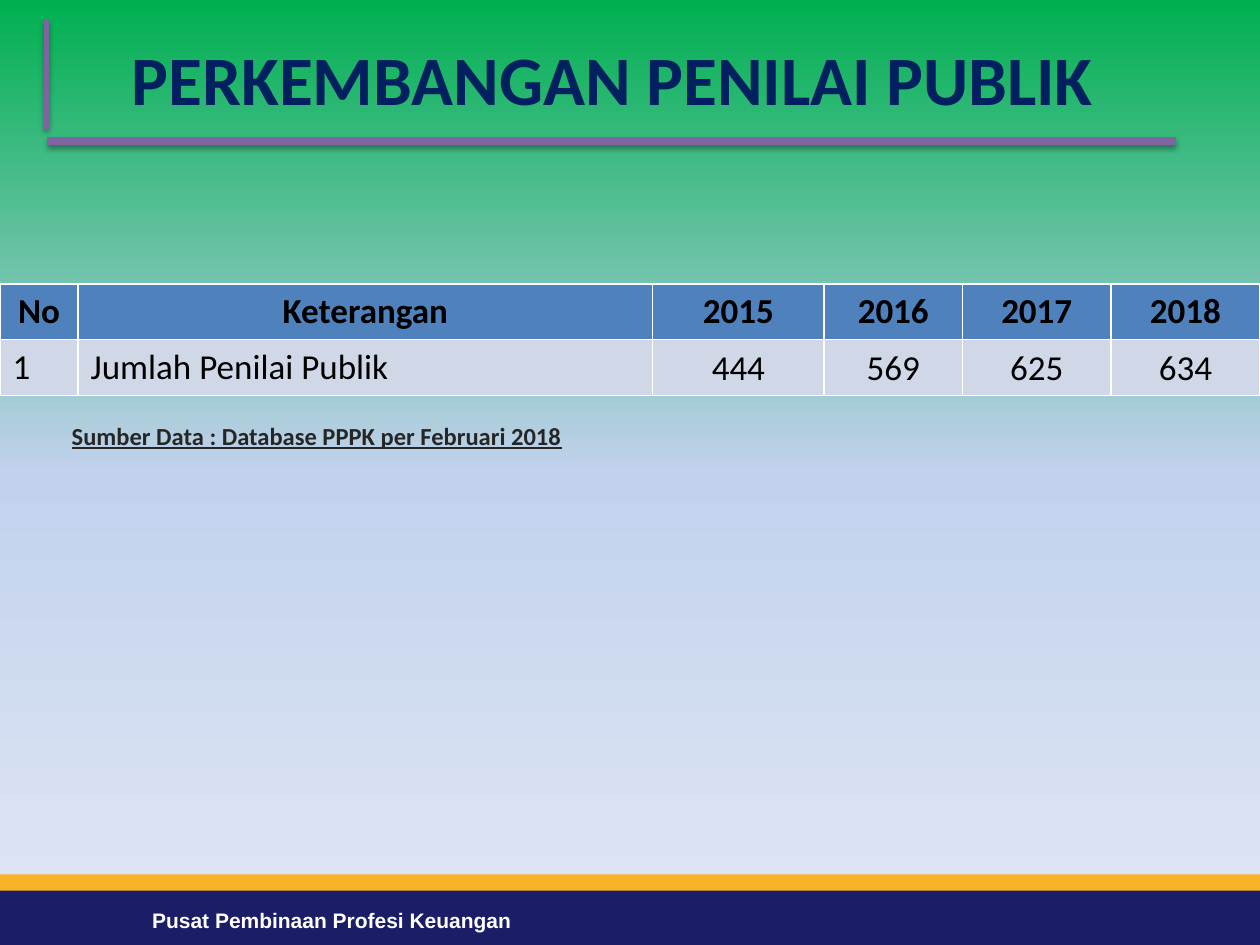
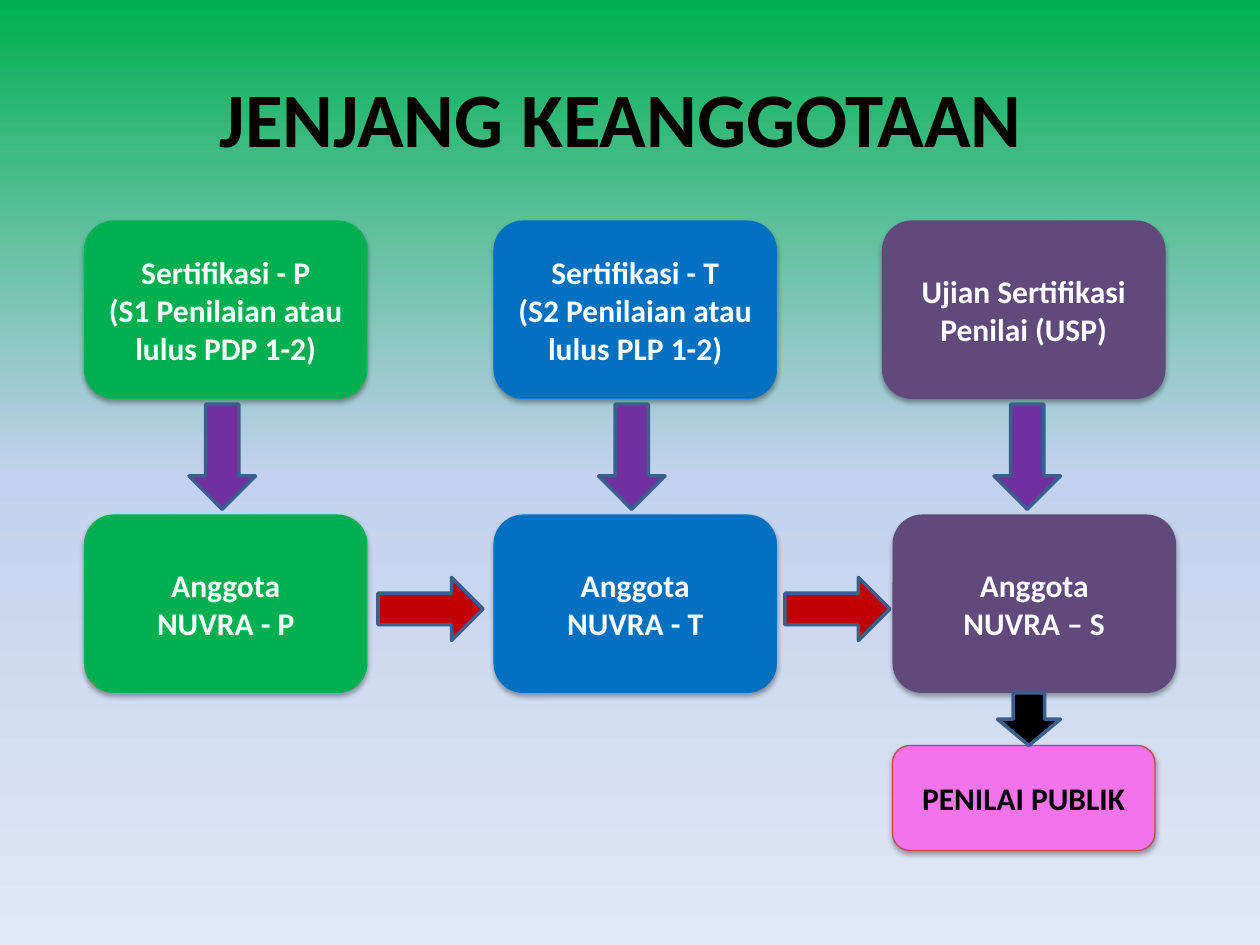
from copy import deepcopy
from dataclasses import dataclass

from lxml import etree
from pptx import Presentation
from pptx.dml.color import RGBColor
from pptx.enum.shapes import MSO_CONNECTOR, MSO_SHAPE
from pptx.enum.text import MSO_ANCHOR, MSO_AUTO_SIZE, PP_ALIGN
from pptx.oxml.ns import qn
from pptx.util import Pt

LEFT, CENTER = PP_ALIGN.LEFT, PP_ALIGN.CENTER
TOP, MIDDLE = MSO_ANCHOR.TOP, MSO_ANCHOR.MIDDLE
RECTANGLE, ROUNDED = MSO_SHAPE.RECTANGLE, MSO_SHAPE.ROUNDED_RECTANGLE
DOWN, RIGHT = MSO_SHAPE.DOWN_ARROW, MSO_SHAPE.RIGHT_ARROW
STRAIGHT = MSO_CONNECTOR.STRAIGHT

COLORS = {
    "green": "00B050", "sky": "C2D1ED", "pale": "E1E8F5",
    "navy": "1B1E66", "amber": "F8B426", "white": "FFFFFF", "black": "000000",
    "title": "002060", "rule": "8064A2", "note": "262626",
    "header": "4F81BD", "row": "D0D8E8",
    "blue": "0070C0", "plum": "604A7B", "violet": "7030A0", "red": "C00000",
    "outline": "3A5F8C", "pink": "F373EA", "pink line": "BF4C48",
}
PAGE_WIDTH, PAGE_HEIGHT = 720, 540
TITLE_ONLY = 5


@dataclass(frozen=True)
class Area:
    left: float
    top: float
    width: float
    height: float

    def lengths(self):
        return Pt(self.left), Pt(self.top), Pt(self.width), Pt(self.height)


@dataclass(frozen=True)
class TextStyle:
    size: float
    color: str
    bold: bool = True
    font: str = "Calibri"
    align: PP_ALIGN = CENTER
    underline: bool = False


@dataclass(frozen=True)
class Stage:
    """One membership level: its requirement above, its grade below."""
    color: str
    requirement: str
    grade: str
    requirement_left: float
    grade_left: float
    arrow_left: float


STAGES = [
    Stage("green", "Sertifikasi - P\n(S1 Penilaian atau\nlulus PDP 1-2)",
          "Anggota\nNUVRA - P", 48, 48, 108),
    Stage("blue", "Sertifikasi - T\n(S2 Penilaian atau\nlulus PLP 1-2)",
          "Anggota\nNUVRA - T", 282, 282, 342),
    Stage("plum", "Ujian Sertifikasi Penilai (USP)",
          "Anggota\nNUVRA – S", 504, 510, 568),
]
TABLE_ROWS = [
    ["No", "Keterangan", "2015", "2016", "2017", "2018"],
    ["1", "Jumlah Penilai Publik", "444", "569", "625", "634"],
]
COLUMN_WIDTHS = [44.6, 328.4, 98, 79, 85, 85]
ROW_HEIGHT = 31.8


# Shared helpers
def rgb(name: str) -> RGBColor:
    return RGBColor.from_string(COLORS[name])


def write(text_frame, text: str, style: TextStyle) -> None:
    text_frame.text = text
    for paragraph in text_frame.paragraphs:
        paragraph.alignment = style.align
        for span in paragraph.runs:
            font = span.font
            font.name, font.size = style.font, Pt(style.size)
            font.bold = style.bold
            font.underline = style.underline
            font.color.rgb = rgb(style.color)


def add_shadow(item, opacity: int = 35) -> None:
    effects = etree.SubElement(item.element.spPr, qn("a:effectLst"))
    shadow = etree.SubElement(effects, qn("a:outerShdw"), blurRad=str(Pt(3.1)),
                              dist=str(Pt(1.8)), dir="5400000", rotWithShape="0")
    color = etree.SubElement(shadow, qn("a:srgbClr"), val=COLORS["black"])
    etree.SubElement(color, qn("a:alpha"), val=str(opacity * 1000))


def add_block(page, kind, area: Area, color: str, line: str = "",
              line_width: float = 2, shadow: bool = False):
    block = page.shapes.add_shape(kind, *area.lengths())
    block.fill.solid()
    block.fill.fore_color.rgb = rgb(color)
    if line:
        block.line.color.rgb = rgb(line)
        block.line.width = Pt(line_width)
    else:
        block.line.fill.background()
    if shadow:
        add_shadow(block)
    else:
        block.shadow.inherit = False
    return block


def add_card(page, area: Area, text: str, color: str, text_color: str = "white",
             line: str = "") -> None:
    card = add_block(page, ROUNDED, area, color, line, 0.75, shadow=True)
    card.text_frame.vertical_anchor = MIDDLE
    write(card.text_frame, text, TextStyle(18, text_color))


def add_arrow(page, kind, area: Area, color: str) -> None:
    add_block(page, kind, area, color, "outline")


def add_text(page, area: Area, text: str, style: TextStyle, wrap: bool = True):
    box = page.shapes.add_textbox(*area.lengths())
    box.text_frame.word_wrap = wrap
    write(box.text_frame, text, style)
    return box


def add_rule(page, start: tuple, end: tuple, width: float) -> None:
    rule = page.shapes.add_connector(STRAIGHT, *map(Pt, start + end))
    rule.line.color.rgb = rgb("rule")
    rule.line.width = Pt(width)
    add_shadow(rule)


def set_background(deck) -> None:
    master = deck.slide_master
    fill = master.background.fill
    fill.gradient()
    fill.gradient_angle = 270
    stop_list = next(master.element.iter(qn("a:gsLst")))
    stop_list.append(deepcopy(stop_list[0]))
    for stop, position, color in zip(fill.gradient_stops, (0, 0.5, 1),
                                     ("green", "sky", "pale")):
        stop.position = position
        stop.color.rgb = rgb(color)


def add_page(deck, title: str, area: Area, style: TextStyle):
    page = deck.slides.add_slide(deck.slide_layouts[TITLE_ONLY])
    heading = page.shapes.title
    heading.left, heading.top, heading.width, heading.height = area.lengths()
    heading.text_frame.vertical_anchor = MIDDLE
    heading.text_frame.auto_size = MSO_AUTO_SIZE.NONE
    write(heading.text_frame, title, style)
    return page


# Table
def set_borders(cell, color: str, width: float) -> None:
    properties = cell._tc.get_or_add_tcPr()
    for side in ("lnL", "lnR", "lnT", "lnB"):
        border = etree.SubElement(properties, qn(f"a:{side}"), w=str(Pt(width)))
        fill = etree.SubElement(border, qn("a:solidFill"))
        etree.SubElement(fill, qn("a:srgbClr"), val=COLORS[color])


def add_appraiser_table(page) -> None:
    area = Area(0, 162.3, PAGE_WIDTH, ROW_HEIGHT * len(TABLE_ROWS))
    table = page.shapes.add_table(len(TABLE_ROWS), len(COLUMN_WIDTHS),
                                  *area.lengths()).table
    for column, width in zip(table.columns, COLUMN_WIDTHS):
        column.width = Pt(width)
    for row_index, values in enumerate(TABLE_ROWS):
        table.rows[row_index].height = Pt(ROW_HEIGHT)
        is_header = row_index == 0
        for column_index, value in enumerate(values):
            cell = table.cell(row_index, column_index)
            is_count = not is_header and column_index > 1
            set_borders(cell, "white", 1)
            cell.fill.solid()
            cell.fill.fore_color.rgb = rgb("header" if is_header else "row")
            align = CENTER if is_header or is_count else LEFT
            write(cell.text_frame, value,
                  TextStyle(20, "black", bold=is_header, align=align))
            cell.vertical_anchor = MIDDLE if is_count else TOP
            if is_count:
                cell.margin_left = cell.margin_right = Pt(4.3)
                cell.margin_top = cell.margin_bottom = Pt(0)
                cell.text_frame.paragraphs[0].line_spacing = 1.07


# Slides
def build_growth_page(deck) -> None:
    page = add_page(deck, "PERKEMBANGAN PENILAI PUBLIK",
                    Area(28, 14.4, 644.4, 59.8), TextStyle(39.6, "title"))

    # Footer bands
    add_block(page, RECTANGLE, Area(0, 505.4, PAGE_WIDTH, 34.6), "navy")
    add_block(page, RECTANGLE, Area(0, 499.7, PAGE_WIDTH, 9.3), "amber")
    footer = add_text(page, Area(79.5, 516.5, 220.3, 23.5),
                      "Pusat Pembinaan Profesi Keuangan",
                      TextStyle(12, "white", font="Arial"), wrap=False)
    footer_line = footer.text_frame.paragraphs[0]
    footer_line.line_spacing = 0.9
    footer_line.space_before = Pt(7.5)

    # Figures and their origin
    add_appraiser_table(page)
    note = add_text(page, Area(36, 237, 356.4, 24),
                    "Sumber Data : Database PPPK per Februari 2018",
                    TextStyle(14, "note", align=LEFT, underline=True))
    frame = note.text_frame
    frame.vertical_anchor = MIDDLE
    frame.margin_left = frame.margin_right = Pt(5)
    frame.margin_top = frame.margin_bottom = Pt(3)

    # Title rules
    add_rule(page, (671.8, 80.7), (26.6, 80.7), 4.5)
    add_rule(page, (26.6, 11.5), (26.6, 73.5), 3)


def build_stages_page(deck) -> None:
    page = add_page(deck, "JENJANG KEANGGOTAAN ",
                    Area(36, 21.6, 648, 90), TextStyle(44, "black"))
    card_width, card_height = 162, 102
    requirement_top, grade_top = 126, 294

    # Requirement and grade of each stage
    for stage in STAGES:
        add_card(page, Area(stage.requirement_left, requirement_top,
                            card_width, card_height),
                 stage.requirement, stage.color)
        add_card(page, Area(stage.grade_left, grade_top, card_width, card_height),
                 stage.grade, stage.color)
        add_arrow(page, DOWN, Area(stage.arrow_left, 231, 38, 60), "violet")

    # Promotion from grade to grade
    for arrow_left in (216, 448.5):
        add_arrow(page, RIGHT, Area(arrow_left, 330, 60, 36), "red")

    # Final status
    add_card(page, Area(510, 426, 150, 60), "PENILAI PUBLIK", "pink", "black",
             "pink line")
    add_arrow(page, DOWN, Area(570, 396, 36, 30), "black")


def main() -> None:
    deck = Presentation()
    deck.slide_width, deck.slide_height = Pt(PAGE_WIDTH), Pt(PAGE_HEIGHT)
    set_background(deck)
    build_growth_page(deck)
    build_stages_page(deck)
    deck.save("out.pptx")


if __name__ == "__main__":
    main()
